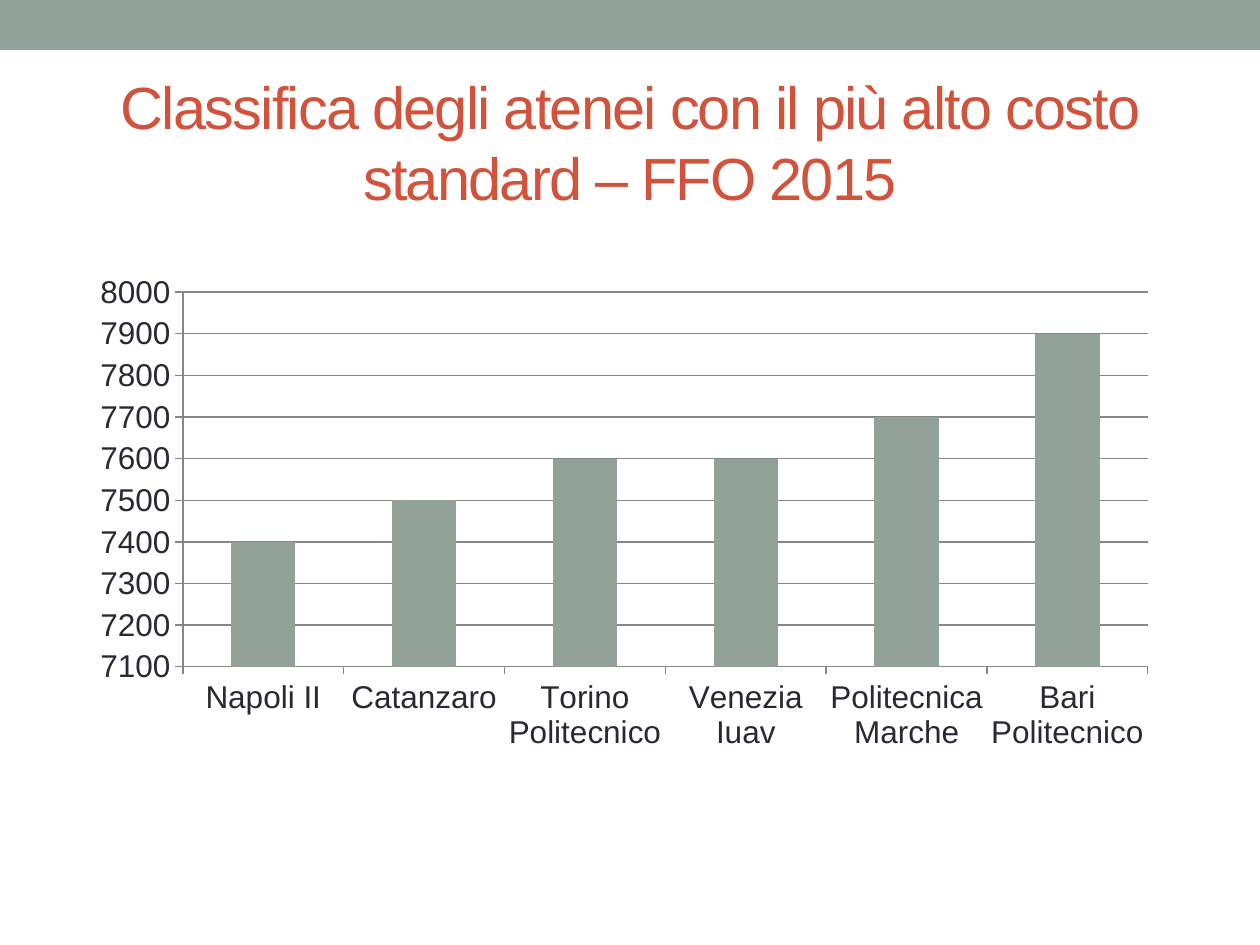
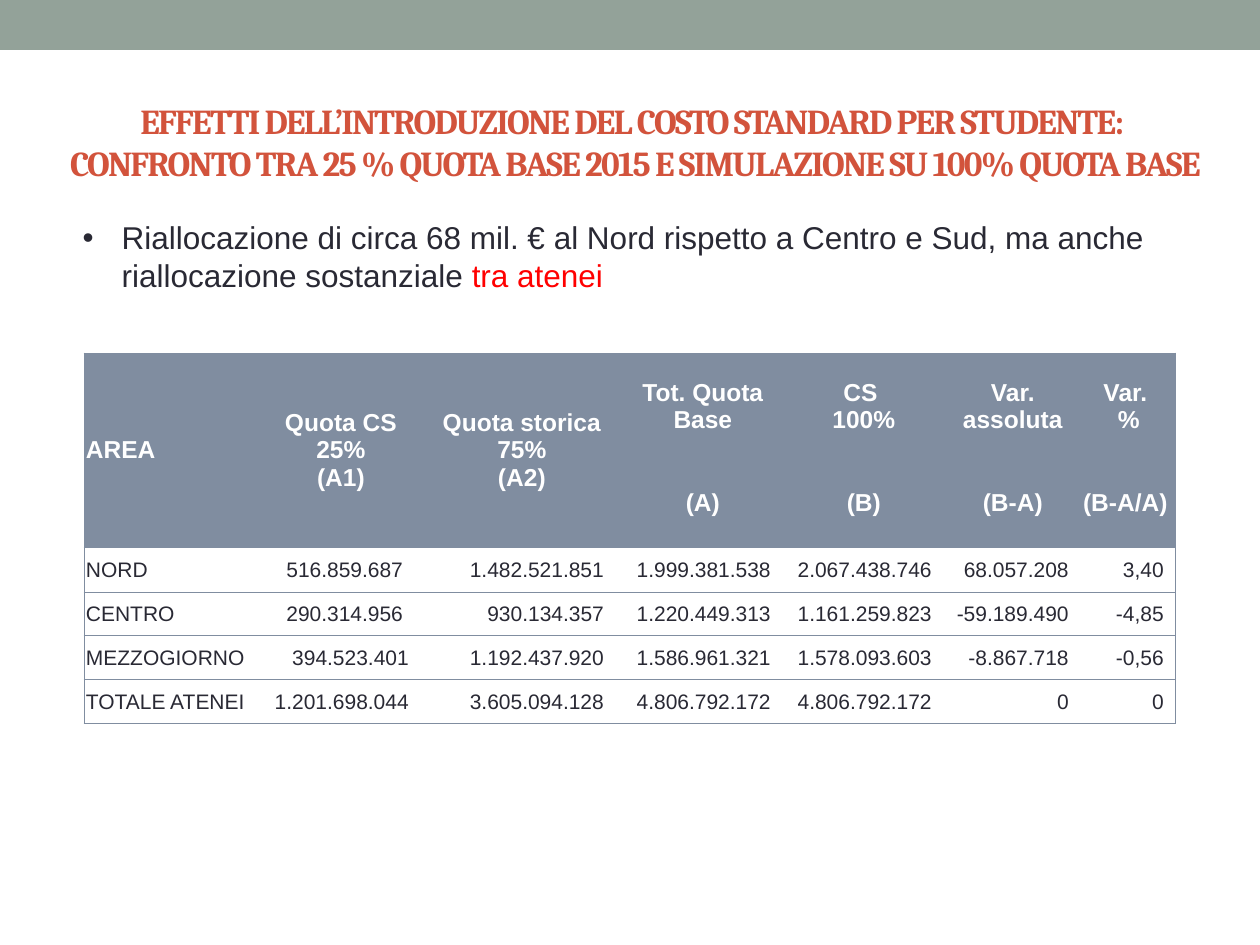
from lxml import etree
from pptx import Presentation
from pptx.chart.data import CategoryChartData
from pptx.dml.color import RGBColor
from pptx.enum.chart import XL_CHART_TYPE as ChartType, XL_TICK_MARK as Tick
from pptx.enum.shapes import MSO_SHAPE as Preset
from pptx.enum.text import MSO_ANCHOR as Anchor, MSO_AUTO_SIZE as AutoSize, PP_ALIGN as Align
from pptx.oxml import parse_xml
from pptx.oxml.ns import nsdecls, qn
from pptx.util import Emu, Pt

SCALE = 914400 / 126
SAGE, RUST, INK, SLATE = "93A299", "D2533C", "292934", "808DA0"
WHITE, RED, AXIS_GREY = "FFFFFF", "FF0000", "878787"


def px(*lengths):
    return [Emu(round(length * SCALE)) for length in lengths]


def color(hex_value):
    return RGBColor.from_string(hex_value)


deck = Presentation()
deck.slide_width, deck.slide_height = px(1260, 945)
chart_page = deck.slides.add_slide(deck.slide_layouts[5])
table_page = deck.slides.add_slide(deck.slide_layouts[1])

band = chart_page.shapes.add_shape(Preset.RECTANGLE, *px(0, 0, 1260, 50))
band.shadow.inherit = False
band.fill.solid()
band.fill.fore_color.rgb = color(SAGE)
band.line.fill.background()
band.element.nvSpPr.cNvPr.set("id", "99")
deck.slide_master.shapes.element.insert(2, band.element)

titles = [
    (chart_page, "Classifica degli atenei con il più alto costo standard – FFO 2015",
     (63, 73, 1134, 136), "Arial", 34, False),
    (table_page, "EFFETTI DELL’INTRODUZIONE DEL COSTO STANDARD PER STUDENTE: \v"
     "CONFRONTO TRA 25 % QUOTA BASE 2015 E SIMULAZIONE SU 100% QUOTA BASE",
     (35, 73, 1200, 136), "Cambria", 20, True),
]
for page, text, place, font_name, size, bold in titles:
    title = page.shapes.title
    title.left, title.top, title.width, title.height = px(*place)
    frame = title.text_frame
    frame.text = text
    frame.auto_size = AutoSize.NONE
    frame.vertical_anchor = Anchor.MIDDLE
    para = frame.paragraphs[0]
    para.alignment = Align.CENTER
    for span in para.runs:
        span.font.name = font_name
        span.font.size = Pt(size)
        span.font.bold = bold
        span.font.color.rgb = color(RUST)
        span.font._element.set("spc", "-100")

costs = CategoryChartData()
costs.categories = ["Napoli II", "Catanzaro", "Torino Politecnico",
                    "Venezia Iuav", "Politecnica Marche", "Bari Politecnico"]
costs.add_series("Series 1", [7400, 7500, 7600, 7600, 7700, 7900])
chart = chart_page.shapes.add_chart(
    ChartType.COLUMN_CLUSTERED, *px(65, 265, 1134, 680), costs).chart
chart.has_legend = False
chart.has_title = False
chart.font.name = "Arial"
chart.font.size = Pt(18)
chart.font.color.rgb = color(INK)
plot = chart.plots[0]
plot.gap_width = 150
plot.vary_by_categories = False
bars = plot.series[0].format.fill
bars.solid()
bars.fore_color.rgb = color(SAGE)
value_axis = chart.value_axis
value_axis.minimum_scale, value_axis.maximum_scale, value_axis.major_unit = 7100, 8000, 100
value_axis.has_major_gridlines = True
for axis in (chart.category_axis, value_axis):
    axis.major_tick_mark = Tick.OUTSIDE
    axis.minor_tick_mark = Tick.NONE
for ruled in (chart.category_axis, value_axis, value_axis.major_gridlines):
    ruled.format.line.color.rgb = color(AXIS_GREY)
    ruled.format.line.width = Pt(0.75)

plot_area = chart.element.find(".//" + qn("c:plotArea"))
for old_layout in plot_area.findall(qn("c:layout")):
    plot_area.remove(old_layout)
layout = parse_xml(f"<c:layout {nsdecls('c')}><c:manualLayout/></c:layout>")
for tag, value in [("layoutTarget", "inner"), ("xMode", "edge"), ("yMode", "edge"),
                   ("x", "0.104"), ("y", "0.04"), ("w", "0.851"), ("h", "0.551")]:
    etree.SubElement(layout[0], qn("c:" + tag)).set("val", value)
plot_area.insert(0, layout)

body = table_page.placeholders[1]
body.left, body.top, body.width, body.height = px(70, 212, 1120, 89)
body.text_frame.auto_size = AutoSize.NONE
para = body.text_frame.paragraphs[0]
para.space_before = Pt(0)
indent = px(39)[0]
properties = para._p.get_or_add_pPr()
properties.set("marL", str(indent))
properties.set("indent", str(-indent))
etree.SubElement(properties, qn("a:buFont")).set("typeface", "Arial")
etree.SubElement(properties, qn("a:buChar")).set("char", "•")
for text, tint in [
    ("Riallocazione di circa 68 mil. € al Nord rispetto a Centro e Sud, "
     "ma anche riallocazione sostanziale ", INK),
    ("tra atenei", RED),
]:
    span = para.add_run()
    span.text = text
    span.font.name = "Arial"
    span.font.size = Pt(18)
    span.font.color.rgb = color(tint)

rows = [
    ["AREA", "Quota CS 25%\v(A1)", "Quota storica 75%\v(A2)", "Tot. Quota Base",
     "CS \v100%", "Var. assoluta", "Var. \v%"],
    ["", "", "", "(A)", "(B)", "(B-A)", "(B-A/A) "],
    ["NORD", "516.859.687 ", "1.482.521.851 ", "1.999.381.538",
     "2.067.438.746", "68.057.208", "3,40"],
    ["CENTRO", "290.314.956 ", "930.134.357 ", "1.220.449.313",
     "1.161.259.823", "-59.189.490", "-4,85"],
    ["MEZZOGIORNO", "394.523.401", "1.192.437.920 ", "1.586.961.321",
     "1.578.093.603", "-8.867.718", "-0,56"],
    ["TOTALE ATENEI", "1.201.698.044", "3.605.094.128 ", "4.806.792.172",
     "4.806.792.172", "0", "0"],
]
column_widths = px(176, 161, 201, 161, 161, 137, 95)
row_heights = px(106, 88, 45, 44, 44, 44)
holder = table_page.shapes.add_table(
    len(rows), len(column_widths), *px(84, 353), sum(column_widths), sum(row_heights))
table = holder.table
table.first_row = table.horz_banding = False
holder.element.find(".//" + qn("a:tableStyleId")).text = "{2D5ABB26-0587-4C30-8999-92F81FD0307C}"
for column, width in zip(table.columns, column_widths):
    column.width = width
for row, height in zip(table.rows, row_heights):
    row.height = height
for column_index in range(3):
    table.cell(0, column_index).merge(table.cell(1, column_index))

last_column = len(column_widths) - 1
for row_index, texts in enumerate(rows):
    is_header = row_index < 2
    for column_index, text in enumerate(texts):
        cell = table.cell(row_index, column_index)
        is_number = not is_header and column_index > 0
        cell.vertical_anchor = Anchor.MIDDLE
        cell.margin_left, cell.margin_top, cell.margin_right, cell.margin_bottom = px(
            2, 1, 12 if is_number else 1, 0)
        sides = ["L"] * (column_index == 0) + ["R"] * (column_index == last_column) + ["T", "B"]
        for side in sides:
            cell._tc.get_or_add_tcPr().append(parse_xml(
                f'<a:ln{side} {nsdecls("a")} w="6350"><a:solidFill>'
                f'<a:srgbClr val="{SLATE}"/></a:solidFill></a:ln{side}>'))
        if is_header:
            cell.fill.solid()
            cell.fill.fore_color.rgb = color(SLATE)
        else:
            cell.fill.background()
        if not text:
            continue
        cell.text_frame.text = text
        para = cell.text_frame.paragraphs[0]
        if column_index == 0:
            para.alignment = Align.LEFT
        else:
            para.alignment = Align.RIGHT if is_number else Align.CENTER
        for span in para.runs:
            span.font.name = "Arial"
            span.font.size = Pt(14 if is_header else 12)
            span.font.bold = is_header
            span.font.color.rgb = color(WHITE if is_header else INK)

deck.save("out.pptx")
